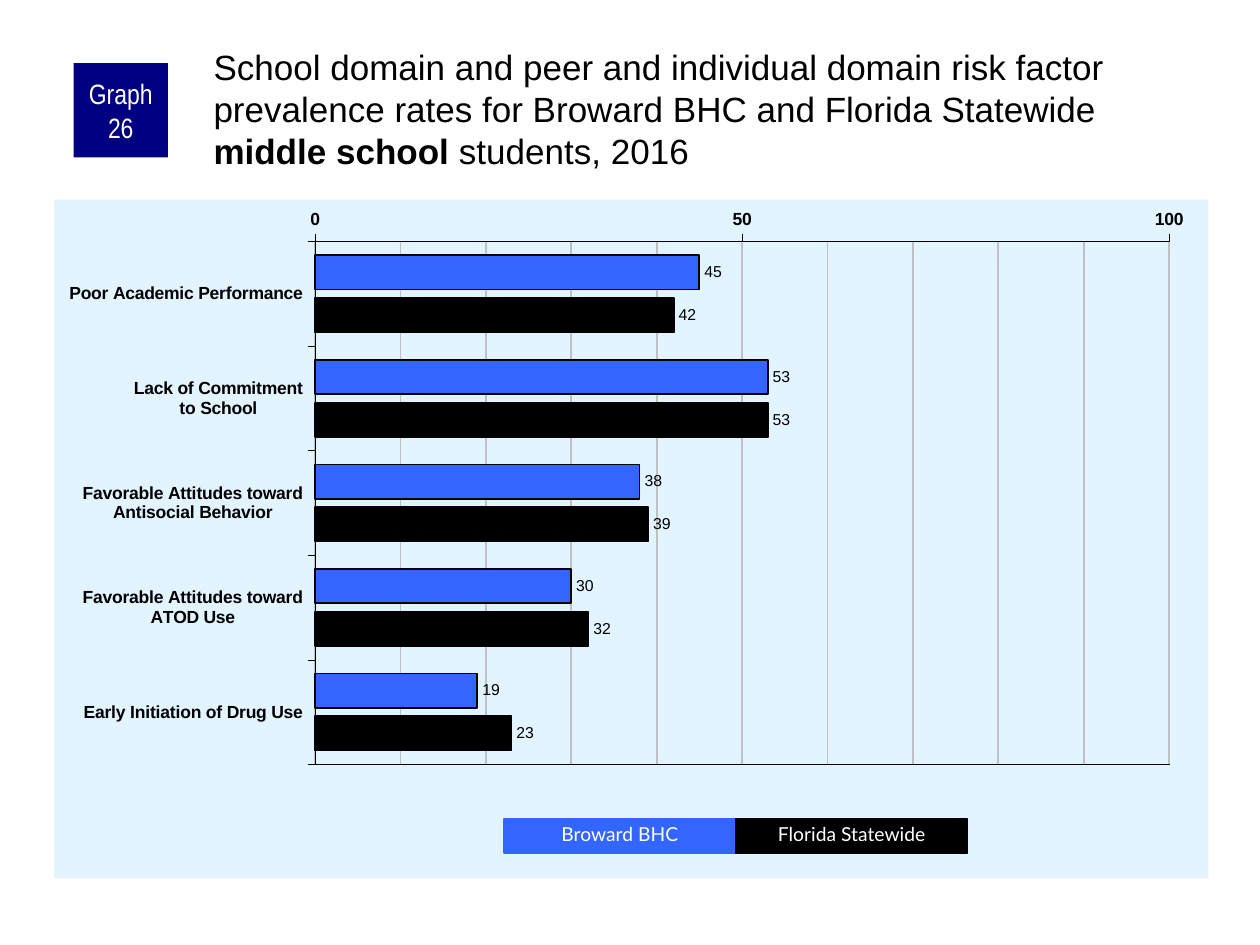
"""Build a slide with a bar chart of risk factor prevalence among middle school students."""
from lxml.etree import SubElement
from pptx import Presentation
from pptx.chart.data import CategoryChartData
from pptx.dml.color import RGBColor
from pptx.enum.chart import XL_AXIS_CROSSES, XL_CHART_TYPE, XL_LABEL_POSITION, XL_TICK_MARK
from pptx.enum.shapes import MSO_SHAPE
from pptx.enum.text import MSO_ANCHOR, MSO_AUTO_SIZE, PP_ALIGN
from pptx.oxml import parse_xml
from pptx.oxml.ns import nsdecls, qn
from pptx.util import Pt


def color(value):
    return RGBColor.from_string(value)


def style_font(font, name, size, value, bold=False):
    font.name, font.size, font.bold = name, Pt(size), bold
    font.color.rgb = color(value)


deck = Presentation()
deck.slide_width, deck.slide_height = Pt(720), Pt(540)
page = deck.slides.add_slide(deck.slide_layouts[5])

chart_data = CategoryChartData()
chart_data.categories = [
    "Poor Academic Performance",
    "Lack of Commitment\nto School",
    "Favorable Attitudes toward\nAntisocial Behavior",
    "Favorable Attitudes toward\nATOD Use",
    "Early Initiation of Drug Use",
]
groups = [
    ("Broward BHC", "3366FF", (45, 53, 38, 30, 19)),
    ("Florida Statewide", "000000", (42, 53, 39, 32, 23)),
]
for name, fill, values in groups:
    chart_data.add_series(name, values)
chart = page.shapes.add_chart(
    XL_CHART_TYPE.BAR_CLUSTERED, Pt(31), Pt(114), Pt(659.5), Pt(388), chart_data
).chart
chart.has_legend = False
chart.has_title = False
style_font(chart.font, "Arial", 11.8, "000000")

plot = chart.plots[0]
plot.gap_width, plot.overlap, plot.vary_by_categories = 80, -25, False
for series, (name, fill, values) in zip(plot.series, groups):
    series.format.fill.solid()
    series.format.fill.fore_color.rgb = color(fill)
    series.format.line.color.rgb = color("000000")
    series.format.line.width = Pt(1)
    labels = series.data_labels
    labels.show_value = True
    labels.position = XL_LABEL_POSITION.OUTSIDE_END
    style_font(labels.font, "Arial", 9, "000000")

category_axis, value_axis = chart.category_axis, chart.value_axis
for axis in (category_axis, value_axis):
    axis.major_tick_mark = XL_TICK_MARK.OUTSIDE
    axis.minor_tick_mark = XL_TICK_MARK.NONE
    axis.format.line.color.rgb = color("000000")
    axis.format.line.width = Pt(0.25)
    style_font(axis.tick_labels.font, "Arial", 10, "000000", True)
category_axis.reverse_order = True
category_axis.crosses = XL_AXIS_CROSSES.MAXIMUM
value_axis.minimum_scale, value_axis.maximum_scale = 0, 100
value_axis.major_unit, value_axis.minor_unit = 50, 10
value_axis.has_major_gridlines = value_axis.has_minor_gridlines = True
minor_gridlines = value_axis._element.find(qn("c:minorGridlines"))
major_line = value_axis.major_gridlines.format.line
major_line.color.rgb = color("C0C0C0")
major_line.width = Pt(1)
major_gridlines = value_axis._element.find(qn("c:majorGridlines"))
minor_gridlines.append(parse_xml(
    f'<c:spPr {nsdecls("c", "a")}><a:ln w="12700"><a:solidFill>'
    '<a:srgbClr val="C0C0C0"/></a:solidFill></a:ln></c:spPr>'
))

chart_element = chart._chartSpace.find(qn("c:chart"))
chart_element.addnext(parse_xml(
    f'<c:spPr {nsdecls("c", "a")}><a:solidFill><a:srgbClr val="E1F4FF"/></a:solidFill>'
    '<a:ln><a:noFill/></a:ln></c:spPr>'
))
plot_area = chart_element.find(qn("c:plotArea"))
plot_area.append(parse_xml(
    f'<c:spPr {nsdecls("c", "a")}><a:noFill/><a:ln w="3175"><a:solidFill>'
    '<a:srgbClr val="000000"/></a:solidFill></a:ln></c:spPr>'
))
for layout in plot_area.findall(qn("c:layout")):
    plot_area.remove(layout)
layout = parse_xml(f'<c:layout {nsdecls("c")}><c:manualLayout/></c:layout>')
for tag, value in (
    ("layoutTarget", "inner"), ("xMode", "edge"), ("yMode", "edge"),
    ("x", "0.226"), ("y", "0.062"), ("w", "0.74"), ("h", "0.77"),
):
    SubElement(layout[0], qn(f"c:{tag}")).set("val", value)
plot_area.insert(0, layout)

badge = page.shapes.add_shape(MSO_SHAPE.RECTANGLE, Pt(42), Pt(36), Pt(54), Pt(54))
badge.shadow.inherit = False
badge.fill.solid()
badge.fill.fore_color.rgb = color("000080")
badge.line.fill.background()
frame = badge.text_frame
frame.text = "Graph 26"
frame.word_wrap = True
frame.vertical_anchor = MSO_ANCHOR.MIDDLE
frame.margin_left = frame.margin_right = Pt(3.6)
frame.margin_top = frame.margin_bottom = 0
frame.paragraphs[0].alignment = PP_ALIGN.CENTER
style_font(frame.paragraphs[0].runs[0].font, "Arial Narrow", 16, "FFFFFF")

title = page.shapes.title
title.left, title.top, title.width, title.height = Pt(120), Pt(24), Pt(570), Pt(60)
frame = title.text_frame
frame.word_wrap = True
frame.auto_size = MSO_AUTO_SIZE.NONE
frame.vertical_anchor = MSO_ANCHOR.TOP
frame.margin_left = frame.margin_top = Pt(2)
frame.margin_right = frame.margin_bottom = 0
paragraph = frame.paragraphs[0]
paragraph.alignment = PP_ALIGN.LEFT
for text, bold in (
    ("School domain and peer and individual domain risk factor prevalence rates "
     "for Broward BHC and Florida Statewide ", False),
    ("middle school", True),
    (" students, 2016", False),
):
    span = paragraph.add_run()
    span.text = text
    style_font(span.font, "Arial", 20, "000000", bold)

for index, (name, fill, values) in enumerate(groups):
    key = page.shapes.add_shape(
        MSO_SHAPE.RECTANGLE, Pt(288 + 132.5 * index), Pt(468), Pt(132.5), Pt(19.5)
    )
    key.shadow.inherit = False
    key.fill.solid()
    key.fill.fore_color.rgb = color(fill)
    key.line.color.rgb = color(fill)
    key.line.width = Pt(0.75)
    frame = key.text_frame
    frame.text = name
    frame.word_wrap = True
    frame.auto_size = MSO_AUTO_SIZE.SHAPE_TO_FIT_TEXT
    frame.vertical_anchor = MSO_ANCHOR.TOP
    paragraph = frame.paragraphs[0]
    paragraph.alignment = PP_ALIGN.CENTER
    paragraph.line_spacing = 0.9
    style_font(paragraph.runs[0].font, "Lato", 11, "FFFFFF")

deck.save("out.pptx")
